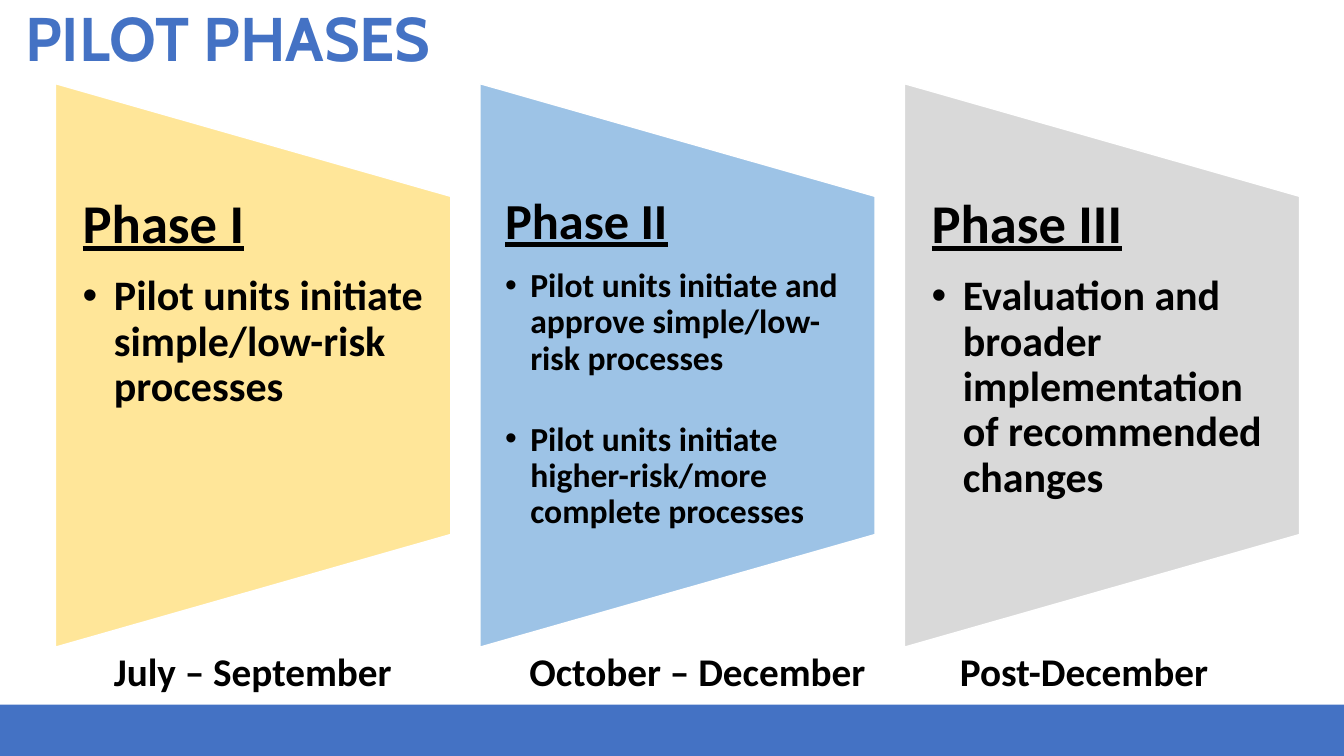
from lxml.etree import SubElement
from pptx import Presentation
from pptx.dml.color import RGBColor
from pptx.enum.shapes import MSO_SHAPE
from pptx.enum.text import MSO_ANCHOR, MSO_AUTO_SIZE, PP_ALIGN
from pptx.oxml.ns import qn
from pptx.util import Inches, Pt

COLORS = {"blue": "4472C4", "yellow": "FFE699", "sky": "9DC3E6",
          "gray": "D9D9D9", "black": "000000", "white": "FFFFFF"}

# Each phase: heading, bullets, dates, date offset, fill, inset, indent, sizes
PHASES = [
    dict(heading="Phase I", bullets=["Pilot units initiate simple/low-risk processes"],
         dates="July – September", date_dx=0.58, fill="yellow",
         inset=0.27, indent=0.31, heading_size=39, bullet_size=30),
    dict(heading="Phase II",
         bullets=["Pilot units initiate and approve simple/low-risk processes",
                  "Pilot units initiate higher-risk/more complete processes"],
         dates="October – December", date_dx=0.49, fill="sky",
         inset=0.25, indent=0.25, heading_size=36, bullet_size=24),
    dict(heading="Phase III",
         bullets=["Evaluation and broader implementation of recommended changes"],
         dates="Post-December", date_dx=0.55, fill="gray",
         inset=0.27, indent=0.31, heading_size=39, bullet_size=30),
]


def rgb(name):
    return RGBColor.from_string(COLORS[name])


def write(p, text, size, font="Calibri", color="black", underline=False,
          after=0, indent=None):
    p.alignment = PP_ALIGN.LEFT
    p.line_spacing = 0.9
    p.space_before = Pt(0)
    p.space_after = Pt(after)
    if indent:
        pPr = p._p.get_or_add_pPr()
        pPr.set("marL", str(Inches(indent)))
        pPr.set("indent", str(-Inches(indent)))
        SubElement(pPr, qn("a:buFont"), typeface="Arial")
        SubElement(pPr, qn("a:buChar"), char="•")
    r = p.add_run()
    r.text = text
    f = r.font
    f.name, f.size, f.bold, f.underline = font, Pt(size), True, underline
    f.color.rgb = rgb(color)


def set_frame(tf, inset_x=0, inset_y=0, anchor=MSO_ANCHOR.TOP):
    tf.word_wrap = True
    tf.auto_size = MSO_AUTO_SIZE.NONE
    tf.vertical_anchor = anchor
    tf.margin_left = tf.margin_right = Inches(inset_x)
    tf.margin_top = tf.margin_bottom = Inches(inset_y)
    return tf


def add_filled(s, kind, x, y, w, h, fill):
    sp = s.shapes.add_shape(kind, Inches(x), Inches(y), Inches(w), Inches(h))
    sp.shadow.inherit = False
    sp.fill.solid()
    sp.fill.fore_color.rgb = rgb(fill)
    sp.line.fill.background()
    return sp


def add_text_box(s, x, y, w, h, **frame):
    box = s.shapes.add_textbox(Inches(x), Inches(y), Inches(w), Inches(h))
    return set_frame(box.text_frame, **frame)


def add_title(s, text, x, y, w, h):
    sp = s.shapes.title
    sp.left, sp.top, sp.width, sp.height = (Inches(v) for v in (x, y, w, h))
    tf = set_frame(sp.text_frame, inset_x=0.1, inset_y=0.05)
    write(tf.paragraphs[0], text, 44, font="Cabin", color="blue")


def add_phase(s, phase, x, y, w, h):
    # Panel: a trapezoid turned on its side about the centre of the box
    panel = add_filled(s, MSO_SHAPE.FLOWCHART_MANUAL_OPERATION,
                       x + (w - h) / 2, y + (h - w) / 2, h, w, phase["fill"])
    panel.rotation = 270
    panel.line.color.rgb = rgb("white")
    panel.line.width = Pt(1)

    # Heading and bullets in the middle three fifths
    tf = add_text_box(s, x, y + h / 5, w, h * 3 / 5, inset_x=phase["inset"])
    write(tf.paragraphs[0], phase["heading"], phase["heading_size"],
          underline=True, after=0.35 * phase["heading_size"])
    for bullet in phase["bullets"]:
        write(tf.add_paragraph(), bullet, phase["bullet_size"],
              after=32, indent=phase["indent"])

    # Dates under the panel
    dx = phase["date_dx"]
    tf = add_text_box(s, x + dx, y + h, w - dx, 0.53, anchor=MSO_ANCHOR.MIDDLE)
    write(tf.paragraphs[0], phase["dates"], 28)


def main():
    prs = Presentation()
    prs.slide_width, prs.slide_height = Inches(13.33), Inches(7.5)
    s = prs.slides.add_slide(prs.slide_layouts[5])

    # Footer band
    add_filled(s, MSO_SHAPE.RECTANGLE, 0, 6.99, 13.33, 0.51, "blue")
    add_title(s, "PILOT PHASES", 0.15, 0.03, 12.99, 0.96)
    for i, phase in enumerate(PHASES):
        add_phase(s, phase, 0.55 + i * 4.21, 0.83, 3.92, 5.59)

    prs.save("out.pptx")


if __name__ == "__main__":
    main()
